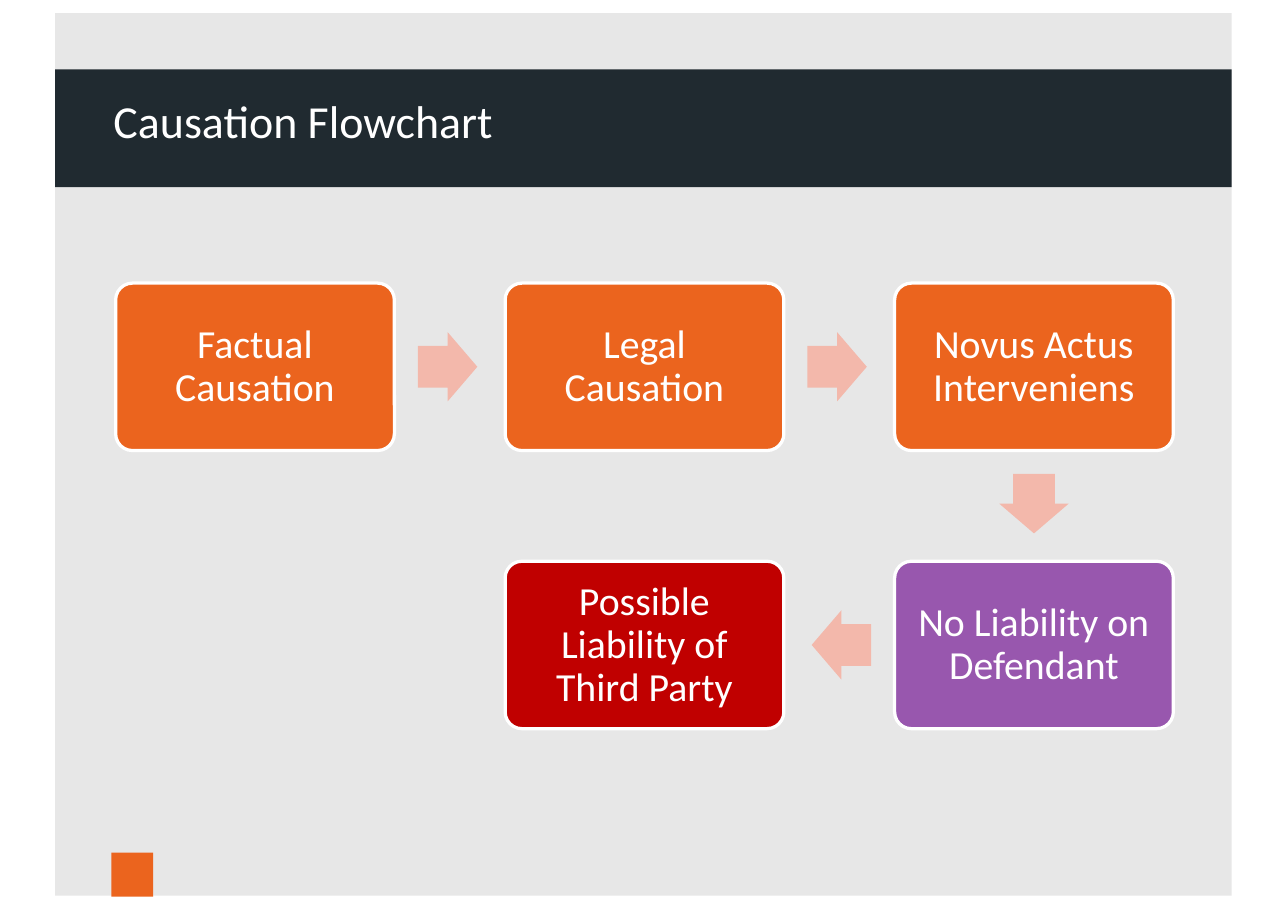
from pptx import Presentation
from pptx.dml.color import RGBColor
from pptx.enum.shapes import MSO_SHAPE
from pptx.enum.text import MSO_ANCHOR, PP_ALIGN
from pptx.util import Inches, Pt


def paint(color_format, hex_color):
    color_format.rgb = RGBColor.from_string(hex_color)


def add_block(kind, left, top, width, height, hex_color):
    block = page.shapes.add_shape(
        kind, Inches(left), Inches(top), Inches(width), Inches(height))
    block.shadow.inherit = False
    block.fill.solid()
    paint(block.fill.fore_color, hex_color)
    block.line.fill.background()
    return block


deck = Presentation()
deck.slide_width, deck.slide_height = Inches(11.69), Inches(8.27)
page = deck.slides.add_slide(deck.slide_layouts[6])

# Grey panel, title band and accent square
add_block(MSO_SHAPE.RECTANGLE, 0.5, 0.12, 10.68, 8.01, "E7E7E7")
band = add_block(MSO_SHAPE.RECTANGLE, 0.5, 0.63, 10.68, 1.07, "202A30")
add_block(MSO_SHAPE.RECTANGLE, 1.01, 7.74, 0.38, 0.4, "EB641E")

frame = band.text_frame
frame.text = "Causation Flowchart"
frame.vertical_anchor = MSO_ANCHOR.TOP
frame.margin_left, frame.margin_top = Inches(0.53), Inches(0.21)
title = frame.paragraphs[0]
title.alignment = PP_ALIGN.LEFT
title.font.name, title.font.size = "Calibri", Pt(30)
paint(title.font.color, "FFFFFF")

# Grid of the flowchart
LEFT, TOP = 1.05, 2.57
BOX_WIDTH, BOX_HEIGHT = 2.53, 1.52
COLUMN_STEP, ROW_STEP = 3.535, 2.525
ARROW_LENGTH, ARROW_BREADTH = 0.54, 0.63
ARROW_SHIFT = 0.02  # arrows sit slightly nearer the box they leave

# Steps in reading order: column, row, text, fill
steps = [
    (0, 0, "Factual Causation", "EB641E"),
    (1, 0, "Legal Causation", "EB641E"),
    (2, 0, "Novus Actus Interveniens", "EB641E"),
    (2, 1, "No Liability on Defendant", "9857AE"),
    (1, 1, "Possible Liability of Third Party", "C00000"),
]

# Boxes
for column, row, text, color in steps:
    box = add_block(MSO_SHAPE.ROUNDED_RECTANGLE, LEFT + column * COLUMN_STEP,
                    TOP + row * ROW_STEP, BOX_WIDTH, BOX_HEIGHT, color)
    box.adjustments[0] = 0.1
    paint(box.line.color, "FFFFFF")
    box.line.width = Pt(2.14)
    frame = box.text_frame
    frame.word_wrap = True
    frame.vertical_anchor = MSO_ANCHOR.MIDDLE
    frame.margin_left = frame.margin_right = Inches(0.12)
    frame.text = text
    para = frame.paragraphs[0]
    para.alignment = PP_ALIGN.CENTER
    para.line_spacing = Pt(28.1)
    para.font.name, para.font.size = "Calibri", Pt(26)
    paint(para.font.color, "FFFFFF")

# Arrows between consecutive boxes, keyed by direction of travel
arrow_kinds = {
    (1, 0): MSO_SHAPE.RIGHT_ARROW,
    (0, 1): MSO_SHAPE.DOWN_ARROW,
    (-1, 0): MSO_SHAPE.LEFT_ARROW,
}
for (column, row, *_), (next_column, next_row, *_) in zip(steps, steps[1:]):
    across, down = next_column - column, next_row - row
    width, height = ARROW_LENGTH, ARROW_BREADTH
    if down:
        width, height = height, width
    center_x = (LEFT + BOX_WIDTH / 2 + (column + across / 2) * COLUMN_STEP
                - across * ARROW_SHIFT)
    center_y = (TOP + BOX_HEIGHT / 2 + (row + down / 2) * ROW_STEP
                - down * ARROW_SHIFT)
    arrow = add_block(arrow_kinds[across, down], center_x - width / 2,
                      center_y - height / 2, width, height, "F3B8AB")
    arrow.adjustments[0] = 0.6
    arrow.adjustments[1] = 0.5

deck.save("out.pptx")
